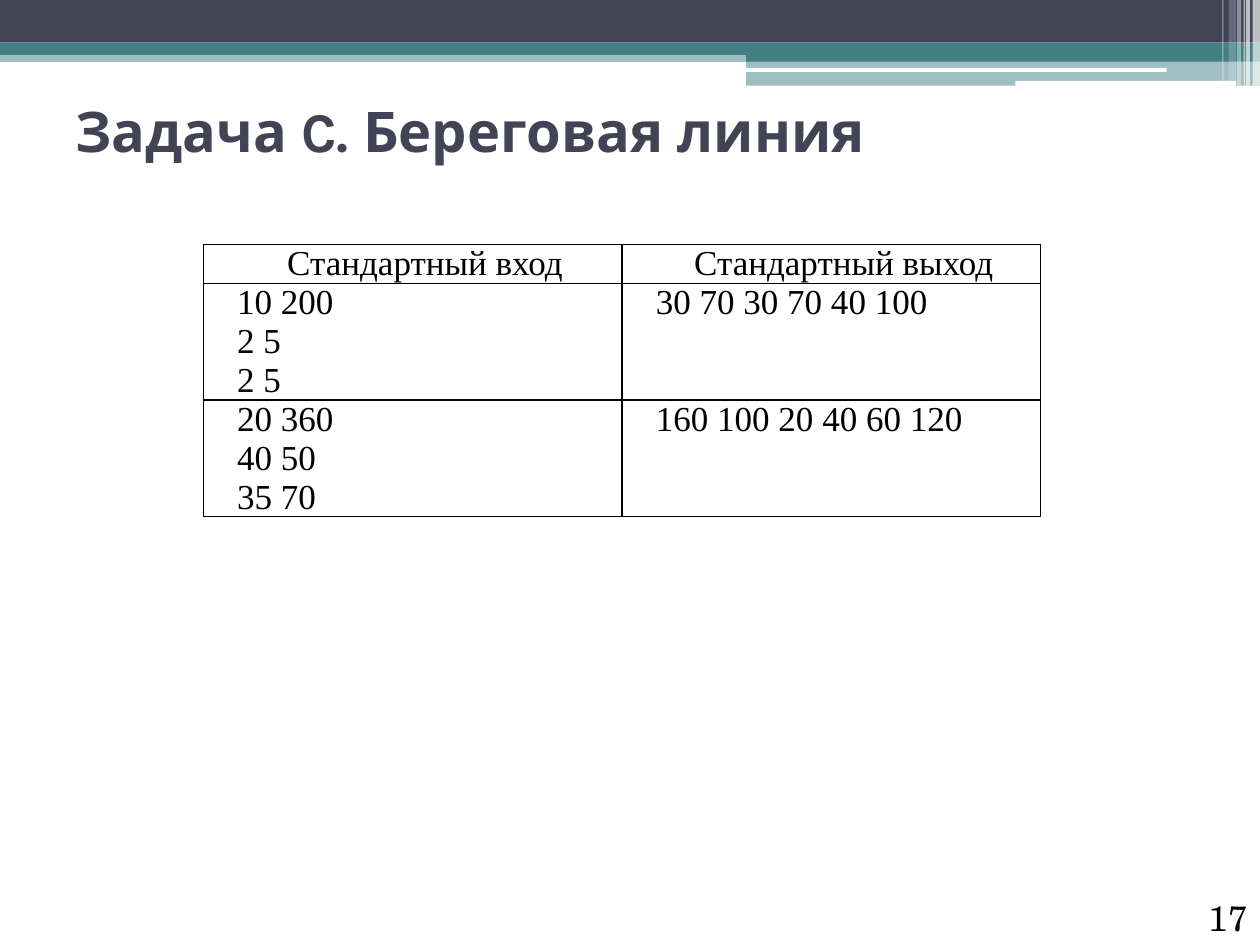
"""Build the task slide with its sample input and output table."""
from dataclasses import dataclass
from typing import Any

from lxml.etree import SubElement as Sub
from pptx import Presentation
from pptx.dml.color import RGBColor
from pptx.enum.shapes import MSO_SHAPE as Form
from pptx.enum.text import MSO_ANCHOR as Anchor, PP_ALIGN as Align
from pptx.oxml.ns import qn
from pptx.util import Cm, Pt

DARK, TEAL, WHITE, BLACK = "424456", "438086", "FFFFFF", "000000"
WIDE, HIGH = 25.4, 19.05
HEAD = {"name": "Karla", "size": Pt(32), "bold": True}
BODY = {"name": "Times New Roman", "size": Pt(20), "bold": False}
PAGE = {"name": "TeX Gyre Schola", "size": Pt(20), "bold": False}
FRAME = {"word_wrap": True, "vertical_anchor": Anchor.MIDDLE}
FOOT = {"word_wrap": True, "vertical_anchor": Anchor.BOTTOM}
INSET = {"margin_left": Cm(0.18), "margin_right": Cm(0.18),
         "margin_top": 0, "margin_bottom": 0}
ROWS = [
    ("Стандартный вход", "Стандартный выход"),
    ("10 200\n2 5\n2 5", "30 70 30 70 40 100"),
    ("20 360\n40 50\n35 70", "160 100 20 40 60 120"),
]


@dataclass
class Bar:
    """A filled band of the header, in centimetres."""
    left: float
    top: float
    width: float
    height: float
    color: str
    alpha: int = 100
    form: Any = Form.RECTANGLE


BARS = [
    Bar(0, 1.02, WIDE, 0.23, TEAL, 50),
    Bar(0, 0, WIDE, 0.86, DARK),
    Bar(0, 0.86, WIDE, 0.25, TEAL),
    Bar(15.04, 0.99, 10.36, 0.25, TEAL),
    Bar(15.04, 1.23, 10.36, 0.5, TEAL, 50),
    Bar(15.01, 1.37, 8.51, 0.08, WHITE, form=Form.ROUNDED_RECTANGLE),
    Bar(20.47, 1.63, 4.45, 0.1, WHITE, form=Form.ROUNDED_RECTANGLE),
    Bar(25.25, 0, 0.15, 1.73, WHITE, 65),
    Bar(25.12, 0, 0.08, 1.73, WHITE, 65),
    Bar(25.07, 0, 0.03, 1.73, WHITE, 60),
    Bar(24.94, 0, 0.08, 1.73, WHITE, 40),
    Bar(24.77, 0, 0.15, 1.63, WHITE, 20),
    Bar(24.64, 0, 0.03, 1.63, WHITE, 30),
]


def paint(target: Any, color: str) -> None:
    """Give a colour format or font colour its hex value."""
    target.rgb = RGBColor.from_string(color)


def apply(target: Any, look: dict[str, Any]) -> None:
    """Set every format value on the target."""
    for name, value in look.items():
        setattr(target, name, value)


def write(para: Any, text: str, look: dict[str, Any], color: str,
          align: Any) -> None:
    """Put one formatted run into a paragraph."""
    run = para.add_run()
    run.text = text
    apply(run.font, look)
    paint(run.font.color, color)
    para.alignment = align


def draw_bar(slide: Any, bar: Bar) -> None:
    """Draw one band without outline or shadow."""
    shape = slide.shapes.add_shape(
        bar.form, Cm(bar.left), Cm(bar.top), Cm(bar.width), Cm(bar.height))
    shape.shadow.inherit = False
    shape.line.fill.background()
    shape.fill.solid()
    paint(shape.fill.fore_color, bar.color)
    if bar.alpha < 100:
        tone = shape.fill._xPr.find(".//" + qn("a:srgbClr"))
        Sub(tone, qn("a:alpha"), val=str(bar.alpha * 1000))


def edge(cell: Any) -> None:
    """Rule all four sides of a cell in black."""
    props = cell._tc.get_or_add_tcPr()
    for side in "LRTB":
        line = Sub(props, qn(f"a:ln{side}"), w=str(Pt(1)))
        Sub(Sub(line, qn("a:solidFill")), qn("a:srgbClr"), val=BLACK)


def fill_cell(cell: Any, text: str, align: Any) -> None:
    """Write the lines of a cell as indented paragraphs."""
    apply(cell, INSET)
    edge(cell)
    cell.fill.background()
    frame = cell.text_frame
    for i, line in enumerate(text.split("\n")):
        para = frame.add_paragraph() if i else frame.paragraphs[0]
        write(para, line, BODY, BLACK, align)
        apply_indent = para._p.get_or_add_pPr().set
        apply_indent("marL", "0")
        apply_indent("indent", str(Cm(0.5)))


def draw_table(slide: Any) -> None:
    """Draw the table of sample inputs and outputs."""
    heights = [0.78, 2.34, 2.34]
    table = slide.shapes.add_table(
        len(ROWS), 2, Cm(4.1), Cm(4.93), Cm(16.88), Cm(sum(heights))).table
    for r, (row, height) in enumerate(zip(ROWS, heights)):
        table.rows[r].height = Cm(height)
        for c, text in enumerate(row):
            align = Align.JUSTIFY if r else Align.CENTER
            fill_cell(table.cell(r, c), text, align)


def main() -> None:
    """Build and save the slide."""
    deck = Presentation()
    apply(deck, {"slide_width": Cm(WIDE), "slide_height": Cm(HIGH)})
    slide = deck.slides.add_slide(deck.slide_layouts[5])
    for bar in BARS:
        draw_bar(slide, bar)
    title = slide.shapes.title
    apply(title, {"left": Cm(1.27), "top": Cm(1.73),
                  "width": Cm(22.86), "height": Cm(1.8)})
    apply(title.text_frame, FRAME)
    write(title.text_frame.paragraphs[0], "Задача C. Береговая линия",
          HEAD, DARK, Align.LEFT)
    draw_table(slide)
    page = slide.shapes.add_textbox(Cm(23.29), Cm(18.03), Cm(2.11), Cm(1.02))
    apply(page.text_frame, FOOT)
    write(page.text_frame.paragraphs[0], "17", PAGE, BLACK, Align.RIGHT)
    deck.save("out.pptx")


if __name__ == "__main__":
    main()
